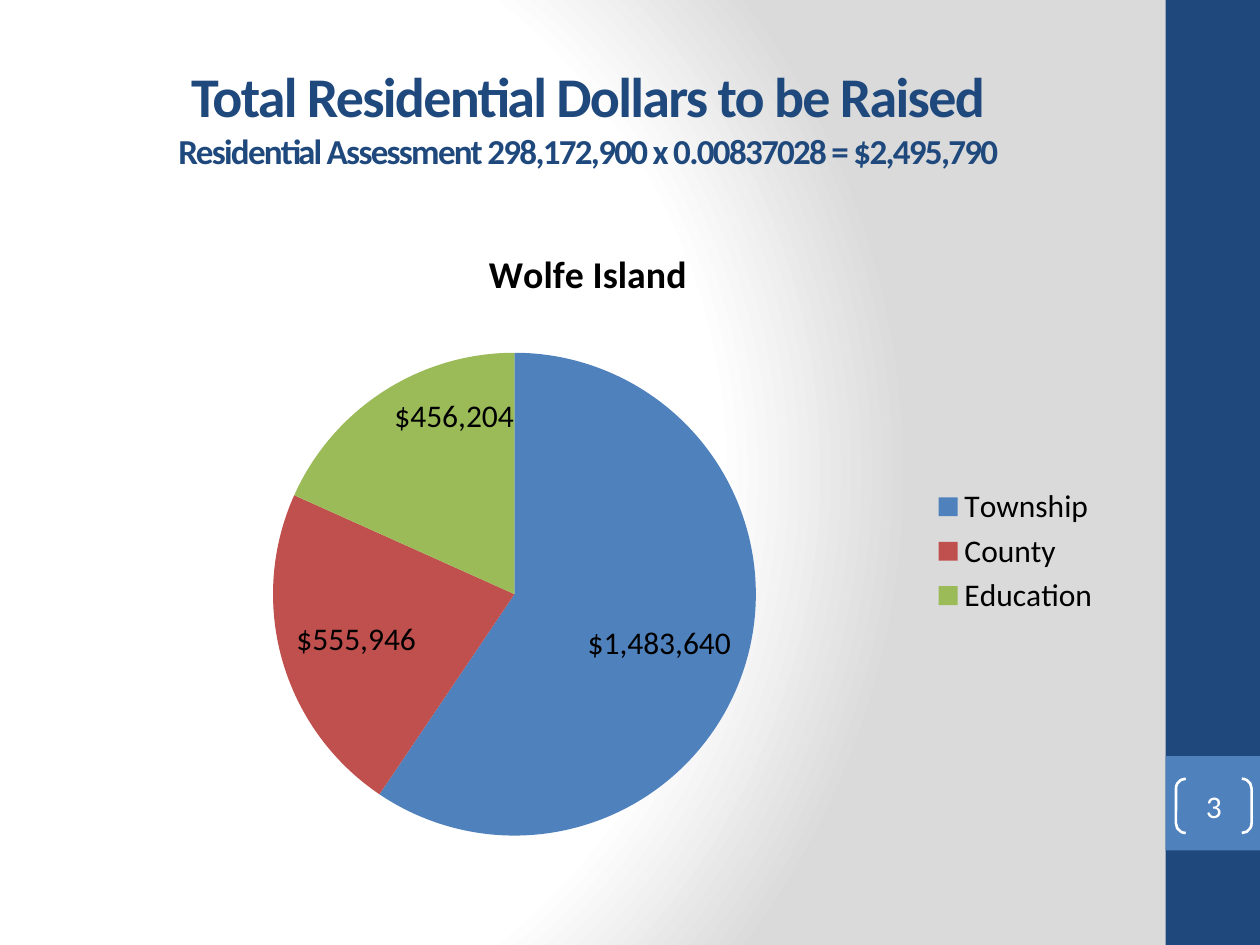
import pptx
import pptx.chart.data
import pptx.dml.color
import pptx.enum.chart
import pptx.enum.shapes
import pptx.enum.text
import pptx.oxml
import pptx.oxml.ns
import pptx.util

Pt = pptx.util.Pt
NAVY, BLUE, RED, GREEN = "1F497D", "4F81BD", "C0504D", "9BBB59"
WHITE, GREY, BLACK = "FFFFFF", "DADADA", "000000"


def rgb(value):
    return pptx.dml.color.RGBColor.from_string(value)


class Deck:
    font = "Calibri"

    def __init__(self, width, height):
        self.prs = pptx.Presentation()
        self.prs.slide_width, self.prs.slide_height = Pt(width), Pt(height)
        self.s = self.prs.slides.add_slide(self.prs.slide_layouts[5])

    def background(self, stops, focus):
        fill = self.s.background.fill
        fill.gradient()
        grad = self.s.background._cSld.find(".//" + pptx.oxml.ns.qn("a:gradFill"))
        gs = "".join(f'<a:gs pos="{pos * 1000}"><a:srgbClr val="{color}"/></a:gs>' for pos, color in stops)
        rect = " ".join(f'{side}="{pct * 1000}"' for side, pct in zip("ltrb", focus))
        new = pptx.oxml.parse_xml(
            f'<a:gradFill {pptx.oxml.ns.nsdecls("a")} rotWithShape="1"><a:gsLst>{gs}</a:gsLst>'
            f'<a:path path="circle"><a:fillToRect {rect}/></a:path></a:gradFill>')
        grad.getparent().replace(grad, new)

    def style(self, font, size, color, bold=False):
        font.name, font.size, font.bold = self.font, Pt(size), bold
        font.color.rgb = rgb(color)

    def run(self, p, text, size, color, bold=False, spacing=0):
        r = p.add_run()
        r.text = text
        self.style(r.font, size, color, bold)
        if spacing:
            r._r.get_or_add_rPr().set("spc", str(spacing * 100))

    def frame(self, sp):
        tf = sp.text_frame
        tf.word_wrap = True
        tf.vertical_anchor = pptx.enum.text.MSO_ANCHOR.MIDDLE
        p = tf.paragraphs[0]
        p.alignment = pptx.enum.text.PP_ALIGN.CENTER
        return tf, p

    def title(self, x, y, w, h, lines):
        sp = self.s.shapes.title
        sp.left, sp.top, sp.width, sp.height = Pt(x), Pt(y), Pt(w), Pt(h)
        tf, p = self.frame(sp)
        tf.auto_size = pptx.enum.text.MSO_AUTO_SIZE.NONE
        for i, (text, size) in enumerate(lines):
            if i:
                p.add_line_break()
            self.run(p, text, size, NAVY, True, -1)

    def shape(self, kind, x, y, w, h, fill=None, line=None):
        sp = self.s.shapes.add_shape(kind, Pt(x), Pt(y), Pt(w), Pt(h))
        sp.shadow.inherit = False
        if fill:
            sp.fill.solid()
            sp.fill.fore_color.rgb = rgb(fill)
        else:
            sp.fill.background()
        if line:
            sp.line.color.rgb = rgb(line)
            sp.line.width = Pt(1.5)
        else:
            sp.line.fill.background()
        return sp

    def rect(self, x, y, w, h, fill):
        self.shape(pptx.enum.shapes.MSO_SHAPE.RECTANGLE, x, y, w, h, fill)

    def page_number(self, x, y, w, h, text):
        sp = self.shape(pptx.enum.shapes.MSO_SHAPE.DOUBLE_BRACKET, x, y, w, h, line=WHITE)
        sp.adjustments[0] = 0.18
        tf, p = self.frame(sp)
        tf.margin_left = tf.margin_top = tf.margin_right = tf.margin_bottom = 0
        self.run(p, text, 18, WHITE)

    def pie(self, x, y, w, h, name, slices, layout):
        data = pptx.chart.data.CategoryChartData()
        data.categories = [label for label, value, color in slices]
        data.add_series(name, [value for label, value, color in slices])
        chart = self.s.shapes.add_chart(
            pptx.enum.chart.XL_CHART_TYPE.PIE, Pt(x), Pt(y), Pt(w), Pt(h), data).chart
        self.style(chart.font, 18, BLACK)
        chart.has_title = True
        self.run(chart.chart_title.text_frame.paragraphs[0], name, 21.6, BLACK, True)
        chart.chart_title.include_in_layout = False
        chart.has_legend = True
        chart.legend.position = pptx.enum.chart.XL_LEGEND_POSITION.RIGHT
        chart.legend.include_in_layout = False
        self.style(chart.legend.font, 18, BLACK)
        plot = chart.plots[0]
        plot.vary_by_categories = True
        for i, (label, value, color) in enumerate(slices):
            fill = plot.series[0].points[i].format.fill
            fill.solid()
            fill.fore_color.rgb = rgb(color)
        plot.has_data_labels = True
        labels = plot.data_labels
        labels.show_value, labels.show_percentage = True, False
        labels.number_format, labels.number_format_is_linked = '" $"#,##0" "', False
        labels.position = pptx.enum.chart.XL_LABEL_POSITION.INSIDE_END
        self.style(labels.font, 18, BLACK)
        area = chart._chartSpace.chart.plotArea
        for old in area.findall(pptx.oxml.ns.qn("c:layout")):
            area.remove(old)
        sizes = "".join(f'<c:{key} val="{value}"/>' for key, value in zip("xywh", layout))
        area.insert(0, pptx.oxml.parse_xml(
            f'<c:layout {pptx.oxml.ns.nsdecls("c")}><c:manualLayout><c:layoutTarget val="inner"/>'
            f'<c:xMode val="edge"/><c:yMode val="edge"/>{sizes}</c:manualLayout></c:layout>'))


def main():
    deck = Deck(720, 540)
    deck.background([(0, WHITE), (75, WHITE), (100, GREY)], (20, 50, 100, 50))
    deck.rect(666, 0, 54, 540, NAVY)
    deck.rect(666, 432, 54, 54, BLUE)
    deck.title(36, 21.6, 600, 90, [
        ("Total Residential Dollars to be Raised", 32),
        ("Residential Assessment 298,172,900 x 0.00837028 = $2,495,790", 20)])
    deck.pie(36, 126, 600, 378, "Wolfe Island", [
        ("Township", 1483640, BLUE), ("County", 555946, RED), ("Education", 456204, GREEN)],
        (0.2, 0.2, 0.46, 0.73))
    deck.page_number(672, 445, 43.2, 31, "3")
    deck.prs.save("out.pptx")


if __name__ == "__main__":
    main()
